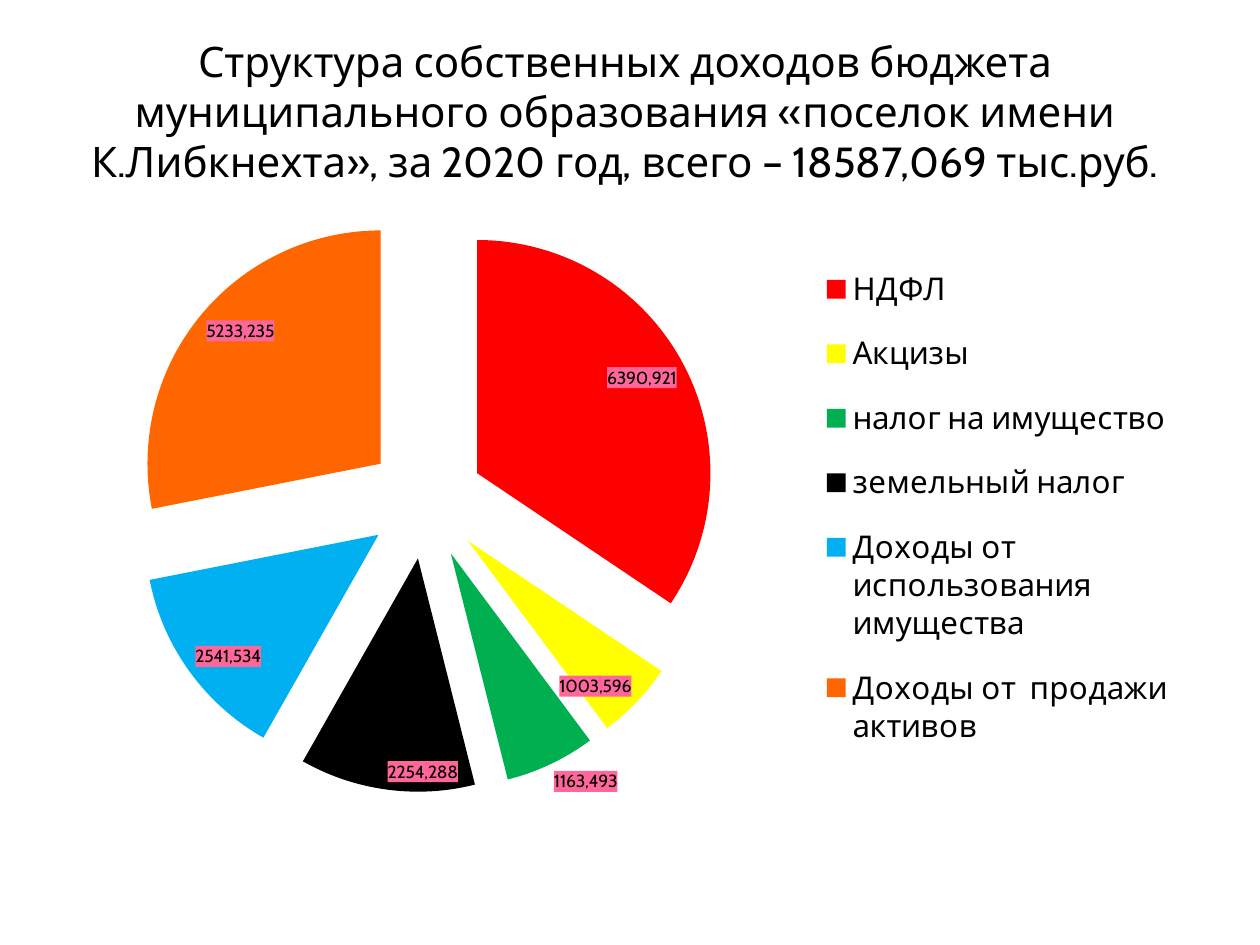
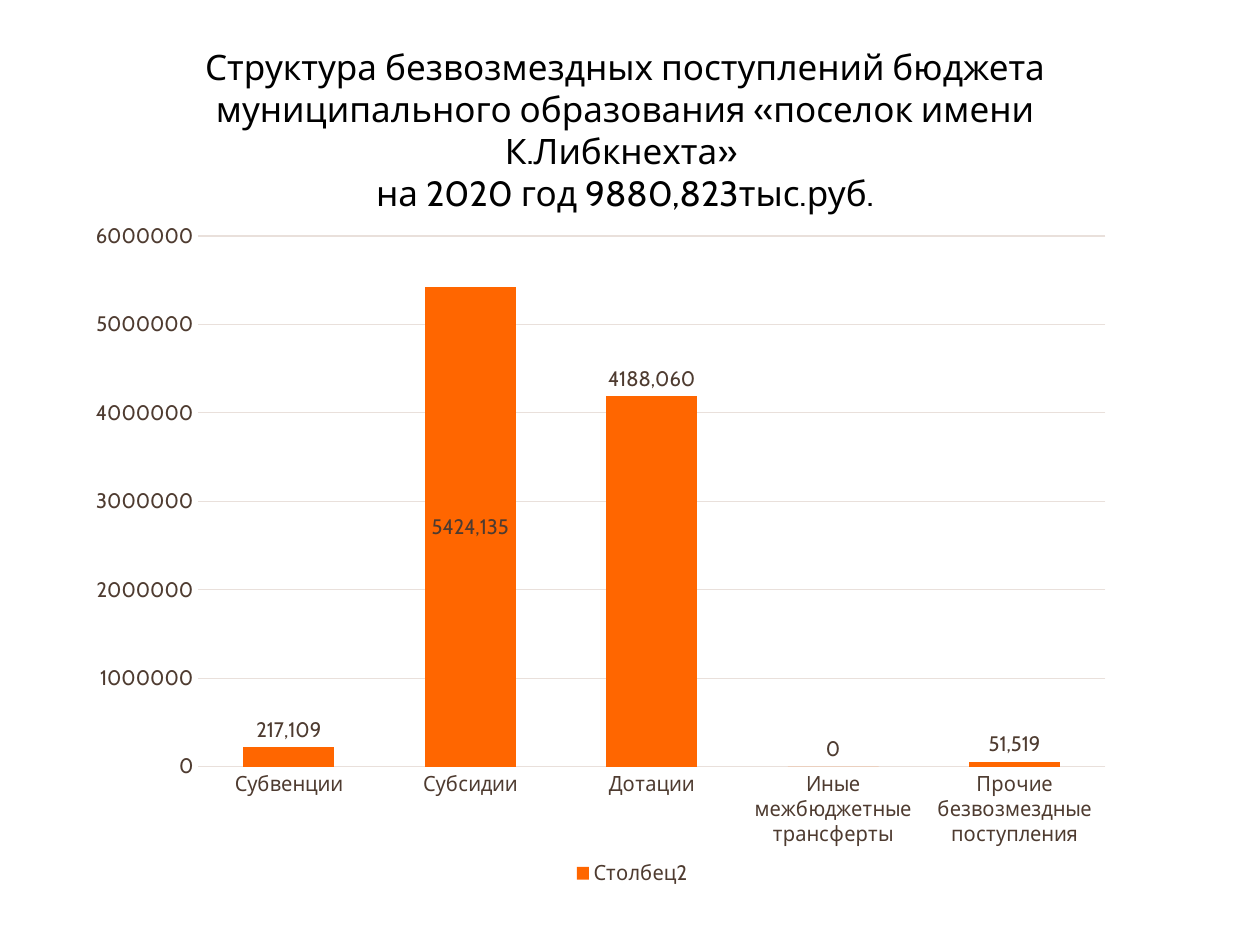
from lxml import etree
from pptx import Presentation
from pptx.chart.data import CategoryChartData
from pptx.dml.color import RGBColor
from pptx.enum.chart import (XL_CHART_TYPE, XL_LABEL_POSITION,
                             XL_LEGEND_POSITION, XL_TICK_MARK)
from pptx.enum.text import PP_ALIGN
from pptx.oxml import parse_xml
from pptx.oxml.ns import nsdecls, qn
from pptx.util import Inches, Pt

PIE, COLUMN = XL_CHART_TYPE.PIE, XL_CHART_TYPE.COLUMN_CLUSTERED
INSIDE, OUTSIDE = XL_LABEL_POSITION.INSIDE_END, XL_LABEL_POSITION.OUTSIDE_END
MIDDLE = XL_LABEL_POSITION.CENTER
RIGHT, BOTTOM = XL_LEGEND_POSITION.RIGHT, XL_LEGEND_POSITION.BOTTOM
NO_TICK = XL_TICK_MARK.NONE
CENTER = PP_ALIGN.CENTER

# Shared style
FONT = "Cabin"
BLACK, WHITE, BROWN, GRID = "000000", "FFFFFF", "4E3B30", "E9E0DB"
ORANGE, LABEL_PINK = "FF6600", "FF6699"

# Category, value in thousands of roubles, label, slice colour, label place
INCOME = [
    ("НДФЛ", 6390.921, "6390,921", "FF0000", INSIDE),
    ("Акцизы", 1003.596, "1003,596", "FFFF00", INSIDE),
    ("налог на имущество", 1160.143, "1163,493", "00B050", OUTSIDE),
    ("земельный налог", 2254.288, "2254,288", BLACK, INSIDE),
    ("Доходы от использования имущества", 2541.534, "2541,534", "00B0F0", INSIDE),
    ("Доходы от  продажи активов", 5218.086, "5233,235", ORANGE, INSIDE),
]
# Category, value in roubles, label, label place
TRANSFERS = [
    ("Субвенции", 217109, "217,109", OUTSIDE),
    ("Субсидии", 5424135, "5424,135", MIDDLE),
    ("Дотации", 4188060, "4188,060", OUTSIDE),
    ("Иные межбюджетные трансферты", 0, "0", OUTSIDE),
    ("Прочие безвозмездные поступления", 51518.87, "51,519", OUTSIDE),
]


def rgb(value):
    return RGBColor.from_string(value)


def style_font(font, size, color):
    font.name = FONT
    font.size = Pt(size)
    font.bold = False
    font.color.rgb = rgb(color)


def add_slide(prs):
    slide = prs.slides.add_slide(prs.slide_layouts[6])
    slide.background.fill.solid()
    slide.background.fill.fore_color.rgb = rgb(WHITE)
    return slide


def add_title(slide, text, box, size):
    frame = slide.shapes.add_textbox(*map(Inches, box)).text_frame
    frame.word_wrap = True
    frame.text = text
    for paragraph in frame.paragraphs:
        paragraph.alignment = CENTER
        for run in paragraph.runs:
            style_font(run.font, size, BLACK)


def add_chart(slide, kind, rows, series_name, box):
    data = CategoryChartData()
    data.categories = [row[0] for row in rows]
    data.add_series(series_name, [row[1] for row in rows])
    chart = slide.shapes.add_chart(kind, *map(Inches, box), data).chart
    chart.has_title = False
    return chart


def add_legend(chart, position, size, color):
    chart.has_legend = True
    chart.legend.position = position
    chart.legend.include_in_layout = False
    style_font(chart.legend.font, size, color)


def set_layout(element, x, y, w, h, inner=False):
    """Give a plot area or legend a fixed place, in fractions of the chart."""
    for old in element.findall(qn("c:layout")):
        element.remove(old)
    target = '<c:layoutTarget val="inner"/>' if inner else ""
    sizes = "".join(f'<c:{tag} val="{value}"/>'
                    for tag, value in zip("xywh", (x, y, w, h)))
    layout = parse_xml(
        f'<c:layout {nsdecls("c")}><c:manualLayout>{target}'
        f'<c:xMode val="edge"/><c:yMode val="edge"/>{sizes}'
        '</c:manualLayout></c:layout>')
    position = element.find(qn("c:legendPos"))
    if position is None:
        element.insert(0, layout)
    else:
        position.addnext(layout)


def label_series(series, size, color):
    labels = series.data_labels
    labels.show_value = True
    style_font(labels.font, size, color)


def label_point(point, text, place, size, color, fill=None):
    label = point.data_label
    label.text_frame.text = text
    style_font(label.text_frame.paragraphs[0].runs[0].font, size, color)
    label.position = place
    if fill:
        text_part = label.text_frame._txBody.getparent()
        text_part.addnext(parse_xml(
            f'<c:spPr {nsdecls("c", "a")}><a:solidFill>'
            f'<a:srgbClr val="{fill}"/></a:solidFill></c:spPr>'))


def explode(series, percent):
    explosion = etree.Element(qn("c:explosion"), val=str(percent))
    series._element.find(qn("c:tx")).addnext(explosion)


def style_line(line, color):
    line.color.rgb = rgb(color)
    line.width = Pt(0.75)


def style_axis(axis):
    axis.major_tick_mark = axis.minor_tick_mark = NO_TICK
    style_font(axis.tick_labels.font, 12, BROWN)


def build_income(prs):
    slide = add_slide(prs)
    chart = add_chart(slide, PIE, INCOME, "Series 1", (0.37, 1.55, 9.26, 5.51))
    style_font(chart.font, 17.9, BLACK)
    add_legend(chart, RIGHT, 17.9, BLACK)
    set_layout(chart.legend._element, 0.65, 0.07, 0.33, 0.76)
    set_layout(chart._chartSpace.chart.plotArea, 0.05, 0.02, 0.55, 0.84, inner=True)
    income = chart.plots[0].series[0]
    explode(income, 25)
    label_series(income, 10, BLACK)
    for index, (_, _, text, color, place) in enumerate(INCOME):
        point = income.points[index]
        point.format.fill.solid()
        point.format.fill.fore_color.rgb = rgb(color)
        label_point(point, text, place, 10, BLACK, LABEL_PINK)
    add_title(slide, "Структура собственных доходов бюджета муниципального "
              "образования «поселок имени К.Либкнехта», за 2020 год, "
              "всего – 18587,069 тыс.руб.", (0.39, 0.23, 9.14, 1.31), 24)


def build_transfers(prs):
    slide = add_slide(prs)
    chart = add_chart(slide, COLUMN, TRANSFERS, "Столбец2", (0.76, 1.6, 8.17, 5.47))
    style_font(chart.font, 10, BLACK)
    add_legend(chart, BOTTOM, 12, BROWN)
    set_layout(chart._chartSpace.chart.plotArea, 0.06, 0.05, 0.92, 0.77, inner=True)

    # Axes
    style_axis(chart.category_axis)
    style_line(chart.category_axis.format.line, GRID)
    amounts = chart.value_axis
    style_axis(amounts)
    amounts.minimum_scale, amounts.maximum_scale = 0, 6000000
    amounts.major_unit = 1000000
    amounts.format.line.fill.background()
    style_line(amounts.major_gridlines.format.line, GRID)

    # Columns and their labels
    plot = chart.plots[0]
    plot.gap_width, plot.overlap = 100, -24
    plot.vary_by_categories = False
    transfers = plot.series[0]
    transfers.format.fill.solid()
    transfers.format.fill.fore_color.rgb = rgb(ORANGE)
    label_series(transfers, 12, BROWN)
    for index, (_, _, text, place) in enumerate(TRANSFERS):
        label_point(transfers.points[index], text, place, 12, BROWN)
    add_title(slide, "Структура безвозмездных поступлений бюджета муниципального "
              "образования «поселок имени К.Либкнехта» \n"
              "на 2020 год 9880,823тыс.руб.", (0.7, 0.31, 8.52, 1.11), 20)


def main():
    prs = Presentation()
    prs.slide_width, prs.slide_height = Inches(10), Inches(7.5)
    build_income(prs)
    build_transfers(prs)
    prs.save("out.pptx")


if __name__ == "__main__":
    main()
